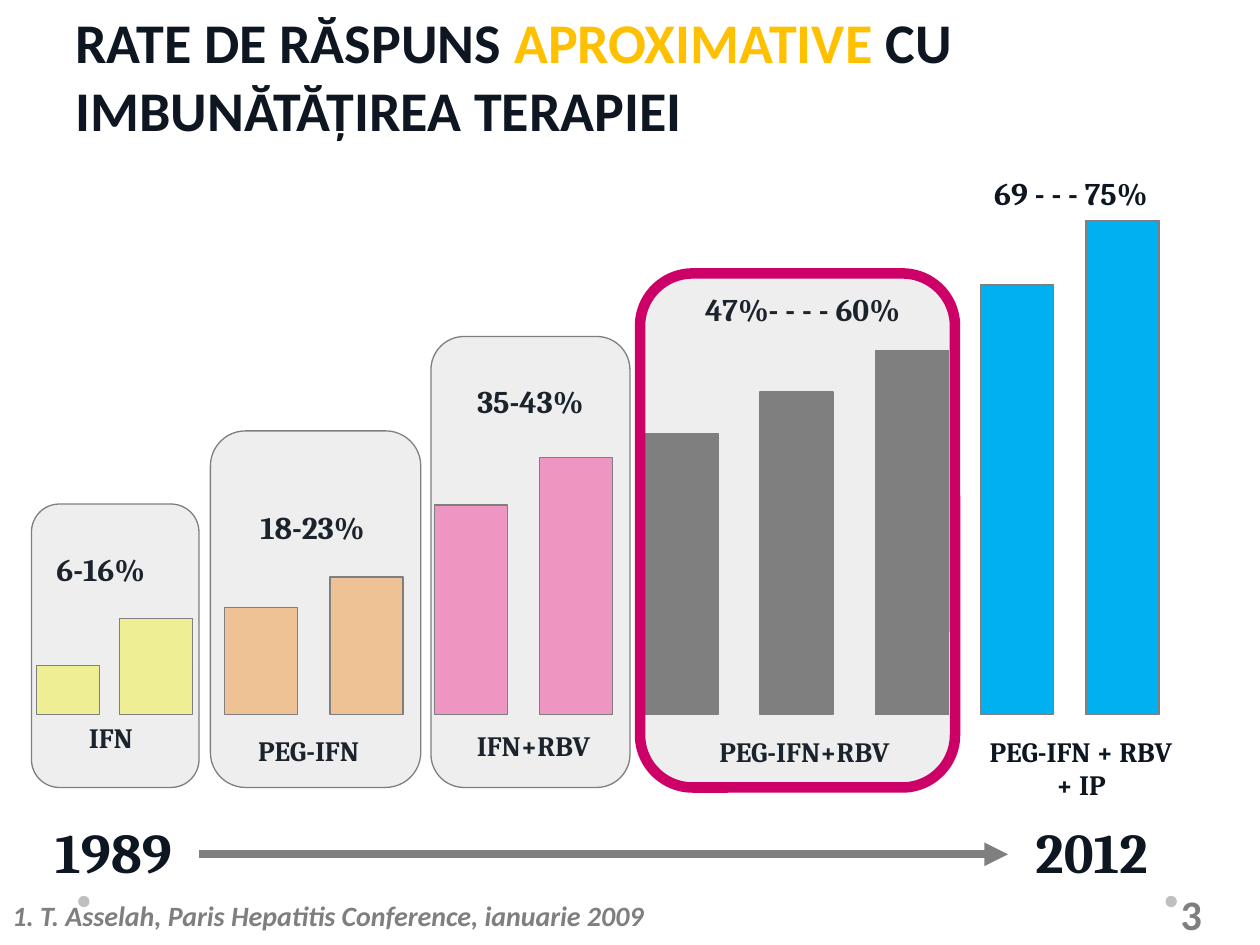
import pptx
import pptx.dml.color
import pptx.enum.shapes
import pptx.enum.text
import pptx.oxml.ns
import pptx.util
from lxml import etree

RGB = pptx.dml.color.RGBColor
SHAPE = pptx.enum.shapes.MSO_SHAPE
ALIGN = pptx.enum.text.PP_ALIGN
ANCHOR = pptx.enum.text.MSO_ANCHOR
qn = pptx.oxml.ns.qn

EMU_PER_PX = 9144  # 100 px to the inch
BASELINE = 567
PANEL_BOTTOM = 625

INK = RGB(0x0D, 0x16, 0x21)
GRAY = RGB(0x7F, 0x7F, 0x7F)
DOT_GRAY = RGB(0xBF, 0xBF, 0xBF)
GOLD = RGB(0xFF, 0xC0, 0x00)
YELLOW = RGB(0xFF, 0xFF, 0x99)
ORANGE = RGB(0xFF, 0xCC, 0x99)
PINK = RGB(0xFF, 0x99, 0xCC)
BLUE = RGB(0x00, 0xB0, 0xF0)
CRIMSON = RGB(0xCC, 0x00, 0x66)

# Bars: (left, top, width), all standing on the baseline
BARS = [
    (YELLOW, [(29, 528, 50), (95, 491, 58)]),
    (ORANGE, [(178, 482, 58), (262, 458, 58)]),
    (PINK, [(345, 401, 58), (428, 363, 58)]),
    (GRAY, [(512, 344, 58), (603, 311, 58), (695, 278, 58)]),
    (BLUE, [(778, 226, 58), (862, 175, 58)]),
]

# Panels: left, top, width, outline colour, outline points
PANELS = [
    (25, 400, 133, GRAY, 0.75),
    (167, 342, 167, GRAY, 0.75),
    (342, 267, 158, GRAY, 0.75),
    (508, 217, 250, CRIMSON, 6),
]

RATES = [
    ("6-16%", (12, 432, 136, 40)),
    ("18-23%", (187, 398, 122, 40)),
    ("35-43%", (359, 298, 124, 40)),
    ("47%- - - - 60%", (508, 225, 258, 40)),
    ("69 - - - 75%", (750, 133, 200, 40)),
]

THERAPIES = [
    (["IFN"], (58, 567, 60, 37)),
    (["PEG-IFN"], (137, 577, 216, 37)),
    (["IFN+RBV"], (310, 573, 227, 37)),
    (["PEG-IFN+RBV"], (552, 578, 173, 37)),
    (["PEG-IFN + RBV", "+ IP"], (763, 578, 190, 64)),
]

YEARS = [("1989", (34, 644, 120, 64)), ("2012", (812, 644, 120, 64))]


def px(*lengths):
    return [pptx.util.Emu(length * EMU_PER_PX) for length in lengths]


def add_text(slide, box, paragraphs, size, font="Cambria", align=ALIGN.LEFT,
             anchor=ANCHOR.TOP, italic=False, wrap=True):
    """Add bold text; each paragraph is a list of (text, colour) runs."""
    frame = slide.shapes.add_textbox(*px(*box)).text_frame
    frame.word_wrap = wrap
    frame.vertical_anchor = anchor
    for index, runs in enumerate(paragraphs):
        paragraph = frame.add_paragraph() if index else frame.paragraphs[0]
        paragraph.alignment = align
        for text, color in runs:
            run = paragraph.add_run()
            run.text = text
            run.font.name = font
            run.font.size = pptx.util.Pt(size)
            run.font.bold = True
            run.font.italic = italic
            run.font.color.rgb = color
    return frame


def add_filled(slide, kind, box, fill, line=None, line_width=0.88):
    shape = slide.shapes.add_shape(kind, *px(*box))
    shape.shadow.inherit = False
    shape.fill.solid()
    shape.fill.fore_color.rgb = fill
    if line is None:
        shape.line.fill.background()
    else:
        shape.line.color.rgb = line
        shape.line.width = pptx.util.Pt(line_width)
    return shape


def add_bars(slide):
    for color, bars in BARS:
        for left, top, width in bars:
            add_filled(slide, SHAPE.RECTANGLE,
                       (left, top, width, BASELINE - top), color, GRAY)


def add_panel(slide, left, top, width, outline, outline_width):
    """Add a translucent rounded panel over one therapy."""
    panel = add_filled(slide, SHAPE.ROUNDED_RECTANGLE,
                       (left, top, width, PANEL_BOTTOM - top),
                       GRAY, outline, outline_width)
    panel.adjustments[0] = 0.167
    fill_color = panel.fill._xPr.find(qn("a:solidFill"))[0]
    etree.SubElement(fill_color, qn("a:alpha"), val="13000")


def add_time_arrow(slide):
    arrow = slide.shapes.add_connector(
        pptx.enum.shapes.MSO_CONNECTOR.STRAIGHT, *px(158, 678, 800, 678))
    arrow.line.color.rgb = GRAY
    arrow.line.width = pptx.util.Pt(4.5)
    etree.SubElement(arrow.line._get_or_add_ln(), qn("a:tailEnd"), type="triangle")
    etree.SubElement(arrow._element.spPr, qn("a:effectLst"))


def add_page_number(slide):
    frame = add_text(slide, (934, 705, 61, 40), [[("3", GRAY)]], 24, "Calibri",
                     anchor=ANCHOR.MIDDLE)
    frame.margin_left, frame.margin_right = px(3, 5)
    frame.margin_top, frame.margin_bottom = px(5, 5)


def main():
    deck = pptx.Presentation()
    deck.slide_width, deck.slide_height = px(1000, 750)
    slide = deck.slides.add_slide(deck.slide_layouts[6])

    for left in (925, 62):
        add_filled(slide, SHAPE.OVAL, (left, 711, 9, 9), DOT_GRAY)
    for lines, box in THERAPIES:
        add_text(slide, box, [[(line, INK)] for line in lines], 16,
                 align=ALIGN.CENTER, wrap=False)
    for rate, box in RATES:
        add_text(slide, box, [[(rate, INK)]], 18, align=ALIGN.CENTER)
    for year, box in YEARS:
        add_text(slide, box, [[(year, INK)]], 32)
    add_time_arrow(slide)
    add_bars(slide)
    for panel in PANELS:
        add_panel(slide, *panel)

    title = [("RATE DE RĂSPUNS ", INK), ("APROXIMATIVE", GOLD),
             (" CU IMBUNĂTĂȚIREA TERAPIEI", INK)]
    add_text(slide, (50, -3, 900, 125), [title], 32, "Calibri", anchor=ANCHOR.MIDDLE)
    source = "1. T. Asselah, Paris Hepatitis Conference, ianuarie 2009"
    add_text(slide, (0, 708, 587, 37), [[(source, GRAY)]], 16, "Calibri",
             anchor=ANCHOR.BOTTOM, italic=True)
    add_page_number(slide)

    deck.save("out.pptx")


if __name__ == "__main__":
    main()
